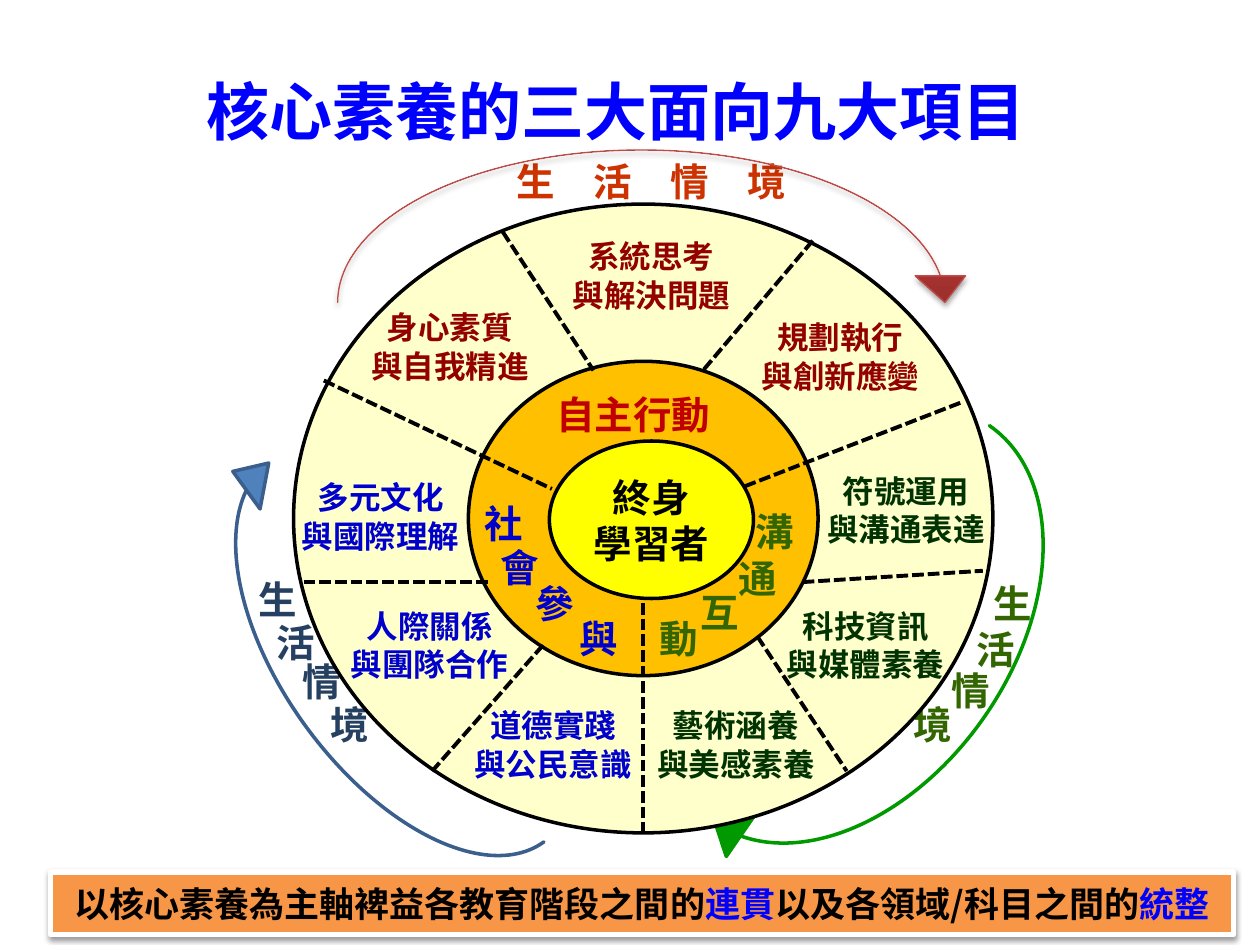
from dataclasses import dataclass

from lxml import etree
from pptx import Presentation
from pptx import util as u
from pptx.dml.color import RGBColor
from pptx.enum import dml, shapes, text
from pptx.oxml.ns import qn


@dataclass(frozen=True)
class Theme:
    font: str = "Noto Sans CJK SC"
    title_size: float = 36
    label_size: float = 22
    banner_size: float = 20
    item_size: float = 18
    line_height: float = 1.22
    black: str = "000000"
    white: str = "FFFFFF"
    bright_blue: str = "0000FF"
    blue: str = "0000CC"
    navy: str = "254061"
    arrow_blue: str = "4F81BD"
    arrow_blue_line: str = "3A5F8C"
    green: str = "336600"
    dark_green: str = "003300"
    arrow_green: str = "009900"
    orange_red: str = "CC3300"
    red: str = "C00000"
    dark_red: str = "920000"
    arrow_red: str = "CB3E3A"
    arrow_red_dark: str = "9C2F2D"
    arrow_red_line: str = "BF4C48"
    cream: str = "FFFFCC"
    gold: str = "FFC000"
    yellow: str = "FFFF00"
    banner: str = "F79646"


@dataclass(frozen=True)
class Box:
    left: float
    top: float
    width: float
    height: float

    def inner(self, left, top, width, height):
        return Box(self.left + left, self.top + top, width, height)

    def lengths(self):
        return [u.Inches(n) for n in (self.left, self.top, self.width, self.height)]


THEME = Theme()
CENTER = text.PP_ALIGN.CENTER


def rgb(color):
    return RGBColor.from_string(color)


def style_run(run, size, color):
    """Set the font for both Latin and East Asian characters."""
    run.font.name = THEME.font
    run.font.size = u.Pt(size)
    run.font.bold = True
    run.font.color.rgb = rgb(color)
    east_asian = etree.Element(qn("a:ea"), typeface=THEME.font)
    run.font._element.find(qn("a:latin")).addnext(east_asian)


def write(frame, lines, size, align=CENTER):
    """Fill a frame with lines, each a list of (words, color) runs."""
    for number, runs in enumerate(lines):
        paragraph = frame.add_paragraph() if number else frame.paragraphs[0]
        paragraph.alignment = align
        paragraph.line_spacing = u.Pt(round(size * THEME.line_height, 1))
        for words, color in runs:
            run = paragraph.add_run()
            run.text = words
            style_run(run, size, color)


def add_label(slide, box, words, size, color):
    frame = slide.shapes.add_textbox(*box.lengths()).text_frame
    frame.word_wrap = True
    frame.margin_left = frame.margin_right = 0
    write(frame, [[(line, color)] for line in words.split("\n")], size)


def add_scattered(slide, box, characters, color):
    """Place single characters along a curve."""
    for character, left, top in characters:
        add_label(slide, box.inner(left, top, 0.57, 0.47), character,
                  THEME.label_size, color)


def add_shape(slide, kind, box, fill, line, line_width):
    shape = slide.shapes.add_shape(kind, *box.lengths())
    shape.shadow.inherit = False
    shape.fill.solid()
    shape.fill.fore_color.rgb = rgb(fill)
    shape.line.color.rgb = rgb(line)
    shape.line.width = u.Pt(line_width)
    return shape


def drop_shadow(shape, alpha, blur, distance):
    effects = shape._element.spPr.find(qn("a:effectLst"))
    shadow = etree.SubElement(
        effects, qn("a:outerShdw"), blurRad=str(u.Pt(blur)),
        dist=str(u.Pt(distance)), dir="5400000", rotWithShape="0")
    color = etree.SubElement(shadow, qn("a:srgbClr"), val=THEME.black)
    etree.SubElement(color, qn("a:alpha"), val=str(alpha * 1000))


def add_arrow(slide, box, rotation, adjustments, fill, line, line_width):
    arrow = add_shape(slide, shapes.MSO_SHAPE.CURVED_DOWN_ARROW, box, fill, line, line_width)
    arrow.rotation = rotation
    for index, value in enumerate(adjustments):
        arrow.adjustments[index] = value
    return arrow


def add_title(slide, box):
    title = slide.shapes.title
    title.left, title.top, title.width, title.height = box.lengths()
    title.text_frame.vertical_anchor = text.MSO_ANCHOR.MIDDLE
    write(title.text_frame, [[("核心素養的三大面向九大項目", THEME.bright_blue)]],
          THEME.title_size, text.PP_ALIGN.LEFT)


def add_context(slide, box):
    """Draw the three life-context labels and the arrows around the wheel."""
    add_label(slide, box.inner(2.51, 0, 2.32, 0.45), "生　活　情　境",
              THEME.label_size, THEME.orange_red)
    red_arrow = add_arrow(slide, box.inner(1.18, -0.01, 5.02, 1.21), 0, (0, 0.331, 0.174),
                          THEME.arrow_red, THEME.arrow_red_line, 0.75)
    red_arrow.fill.gradient()
    red_arrow.fill.gradient_angle = 90
    stops = ((0, THEME.arrow_red_dark), (0.8, THEME.arrow_red))
    for stop, (position, color) in zip(red_arrow.fill.gradient_stops, stops):
        stop.position = position
        stop.color.rgb = rgb(color)
    drop_shadow(red_arrow, 35, 3.1, 1.8)

    add_scattered(slide, box, [("生", 6.25, 3.35), ("活", 6.12, 3.71),
                               ("情", 5.92, 4.04), ("境", 5.62, 4.31)], THEME.green)
    add_arrow(slide, box.inner(3.72, 3.56, 4.03, 1.28), 124.6, (0, 0.31, 0.174),
              THEME.arrow_green, THEME.arrow_green, 2)

    add_scattered(slide, box, [("生", 0.42, 3.32), ("活", 0.56, 3.66),
                               ("情", 0.77, 3.97), ("境", 0.99, 4.31)], THEME.navy)
    add_arrow(slide, box.inner(-0.68, 3.7, 3.9, 0.99), 234, (0, 0.371, 0.272),
              THEME.arrow_blue, THEME.arrow_blue_line, 2)


def add_spoke(slide, box, start_x, start_y, end_x, end_y):
    ends = (box.left + start_x, box.top + start_y, box.left + end_x, box.top + end_y)
    spoke = slide.shapes.add_connector(shapes.MSO_CONNECTOR.STRAIGHT,
                                       *[u.Inches(n) for n in ends])
    spoke.line.color.rgb = rgb(THEME.black)
    spoke.line.width = u.Pt(2.25)
    spoke.line.dash_style = dml.MSO_LINE.SQUARE_DOT
    etree.SubElement(spoke._element.spPr, qn("a:effectLst"))


def add_wheel(slide, box):
    middle = box.inner(box.width / 4, box.height / 4, box.width / 2, box.height / 2)
    core = box.inner(2.03, 1.88, 1.62, 1.25)
    for ring, fill in ((box, THEME.cream), (middle, THEME.gold), (core, THEME.yellow)):
        ellipse = add_shape(slide, shapes.MSO_SHAPE.OVAL, ring, fill, THEME.black, 2)
    ellipse.text_frame.vertical_anchor = text.MSO_ANCHOR.MIDDLE
    write(ellipse.text_frame, [[(line, THEME.black)] for line in ("終身", "學習者")],
          THEME.label_size)

    for spoke in ((0.24, 1.4, 2.05, 2.26), (2.77, 5, 2.77, 3.12), (3.58, 2.24, 5.31, 1.57),
                  (1.66, 0.22, 2.38, 1.32), (4.12, 0.29, 3.25, 1.32), (0.08, 3, 1.54, 3),
                  (1.98, 3.5, 1.1, 4.5), (4.04, 3, 5.47, 2.91), (3.68, 3.43, 4.39, 4.5)):
        add_spoke(slide, box, *spoke)

    add_label(slide, box.inner(1.97, 1.43, 1.45, 0.43), "自主行動",
              THEME.label_size, THEME.red)
    add_scattered(slide, box, [("社", 1.38, 2.29), ("會", 1.51, 2.64),
                               ("參", 1.79, 2.93), ("與", 2.14, 3.21)], THEME.blue)
    add_scattered(slide, box, [("溝", 3.53, 2.36), ("通", 3.4, 2.73),
                               ("互", 3.1, 3), ("動", 2.77, 3.21)], THEME.green)

    items = {
        THEME.dark_red: [("系統思考\n與解決問題", 2.03, 0.21),
                         ("規劃執行\n與創新應變", 3.53, 0.85),
                         ("身心素質\n與自我精進", 0.43, 0.77)],
        THEME.dark_green: [("符號運用\n與溝通表達", 4.05, 2.07),
                           ("科技資訊\n與媒體素養", 3.73, 3.14),
                           ("藝術涵養\n與美感素養", 2.7, 3.93)],
        THEME.blue: [("多元文化\n與國際理解", -0.12, 2.12),
                     ("人際關係\n與團隊合作", 0.27, 3.14),
                     ("道德實踐\n與公民意識", 1.25, 3.93)],
    }
    for color, entries in items.items():
        for words, left, top in entries:
            add_label(slide, box.inner(left, top, 1.62, 0.71), words, THEME.item_size, color)


def add_banner(slide, box):
    banner = add_shape(slide, shapes.MSO_SHAPE.RECTANGLE, box, THEME.banner, THEME.white, 3)
    drop_shadow(banner, 38, 3.1, 1.6)
    banner.text_frame.word_wrap = False
    banner.text_frame.vertical_anchor = text.MSO_ANCHOR.MIDDLE
    write(banner.text_frame, [[("以核心素養為主軸裨益各教育階段之間的", THEME.black),
                               ("連貫", THEME.bright_blue),
                               ("以及各領域/科目之間的", THEME.black),
                               ("統整", THEME.bright_blue)]], THEME.banner_size)


def main():
    presentation = Presentation()
    presentation.slide_width, presentation.slide_height = u.Inches(10), u.Inches(7.5)
    slide = presentation.slides.add_slide(presentation.slide_layouts[5])
    add_title(slide, Box(1.54, 0.36, 8.13, 1.02))
    add_context(slide, Box(1.5, 1.2, 7, 5.8))
    add_wheel(slide, Box(2.33, 1.62, 5.55, 4.99))
    add_banner(slide, Box(0.4, 6.92, 9.39, 0.5))
    presentation.save("out.pptx")


if __name__ == "__main__":
    main()
